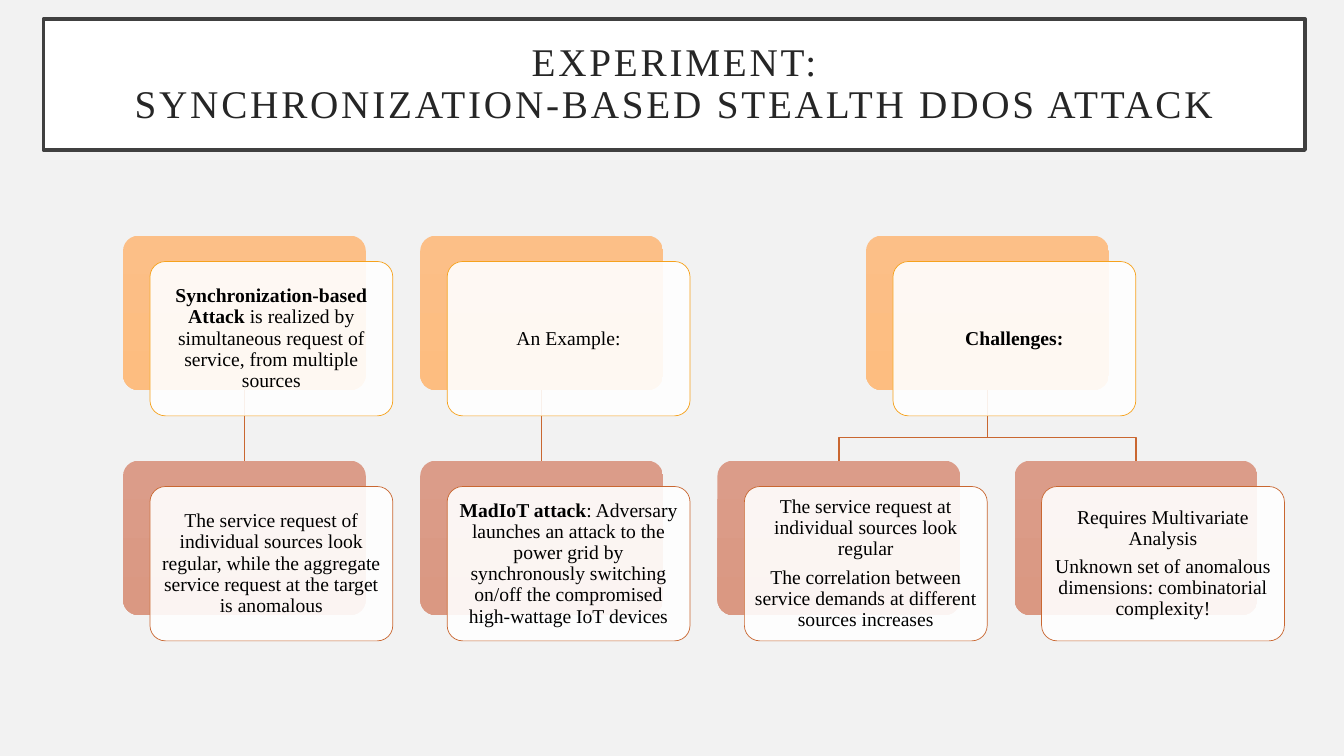
from dataclasses import dataclass

from pptx import Presentation
from pptx.dml.color import RGBColor as Rgb
from pptx.enum.shapes import MSO_CONNECTOR as Connector, MSO_SHAPE as Preset
from pptx.enum.text import MSO_ANCHOR as Anchor, MSO_AUTO_SIZE as AutoSize, PP_ALIGN as Align
from pptx.oxml.ns import qn
from pptx.util import Cm, Pt


@dataclass(frozen=True)
class Theme:
    """Colours, fonts and type sizes of the slide."""
    font: str = "Times New Roman"
    title_size: int = 28
    body_size: int = 14
    paper: str = "F2F2F2"
    white: str = "FFFFFF"
    black: str = "000000"
    title_ink: str = "262626"
    frame: str = "404040"
    orange: str = "F6A21D"
    rust: str = "C96731"
    orange_back: tuple = ("FCBF87", "FDBD80")
    rust_back: tuple = ("DB9C89", "DA9882")


@dataclass(frozen=True)
class Box:
    """A rectangle in centimetres."""
    left: float
    top: float
    width: float
    height: float

    def lengths(self):
        """Return the four lengths for a shape call."""
        return Cm(self.left), Cm(self.top), Cm(self.width), Cm(self.height)


THEME = Theme()
TITLE = ["EXPERIMENT:", "SYNCHRONIZATION-BASED STEALTH DDOS ATTACK"]
BRANCHES = [
    ([("Synchronization-based Attack", " is realized by simultaneous request of service, "
       "from multiple sources")],
     [[("", "The service request of individual sources look regular, while the aggregate "
        "service request at the target is anomalous")]]),
    ([("", "An Example:")],
     [[("MadIoT attack", ": Adversary launches an attack to the power grid by synchronously "
        "switching on/off the compromised high-wattage IoT devices")]]),
    ([("Challenges:", "")],
     [[("", "The service request at individual sources look regular"),
       ("", "The correlation between service demands at different sources increases")],
      [("", "Requires Multivariate Analysis"),
       ("", "Unknown set of anomalous dimensions: combinatorial complexity!")]]),
]
CARD_WIDTH, CARD_HEIGHT = 6.12, 3.89
COLUMN_STEP, ROW_STEP = 7.49, 5.67
SHIFT_X, SHIFT_Y = 0.68, 0.65
ELBOW_RISE = 0.58


def style_para(para, size, colour):
    """Format a centred paragraph."""
    para.alignment = Align.CENTER
    para.line_spacing = 0.9
    para.font.name = THEME.font
    para.font.size = Pt(size)
    para.font.color.rgb = Rgb.from_string(colour)


def set_frame(frame, inset):
    """Set wrapping, anchor and equal margins of a text frame."""
    frame.word_wrap = True
    frame.auto_size = AutoSize.NONE
    frame.vertical_anchor = Anchor.MIDDLE
    frame.margin_left = frame.margin_right = Cm(inset)
    frame.margin_top = frame.margin_bottom = Cm(inset)


def set_line(shape, colour, width):
    """Give a shape or connector a solid line."""
    shape.line.color.rgb = Rgb.from_string(colour)
    shape.line.width = Pt(width)


def add_title(page, box):
    """Place the framed title."""
    title = page.shapes.title
    title.left, title.top, title.width, title.height = box.lengths()
    title.fill.solid()
    title.fill.fore_color.rgb = Rgb.from_string(THEME.white)
    set_line(title, THEME.frame, 2.5)
    frame = title.text_frame
    set_frame(frame, 0.5)
    frame.text = "\n".join(TITLE)
    for para in frame.paragraphs:
        style_para(para, THEME.title_size, THEME.title_ink)
        for span in para.runs:
            span.font._element.set("spc", "200")


def add_rounded(page, box):
    """Add a rounded rectangle without shadow."""
    shape = page.shapes.add_shape(Preset.ROUNDED_RECTANGLE, *box.lengths())
    shape.adjustments[0] = 0.1
    shape.shadow.inherit = False
    return shape


def add_back(page, box, colours):
    """Add the tinted card that lies behind."""
    back = add_rounded(page, box)
    back.fill.gradient()
    back.fill.gradient_angle = 270
    for stop, colour in zip(back.fill.gradient_stops, colours):
        stop.color.rgb = Rgb.from_string(colour)
    back.line.fill.background()
    return back


def add_front(page, box, colour, paragraphs):
    """Add the translucent text card, shifted from the card behind."""
    front = add_rounded(page, Box(box.left + SHIFT_X, box.top + SHIFT_Y, box.width, box.height))
    front.fill.solid()
    front.fill.fore_color.rgb = Rgb.from_string(THEME.white)
    tint = front._element.spPr.find(qn("a:solidFill"))[0]
    tint.append(tint.makeelement(qn("a:alpha"), {"val": "90000"}))
    set_line(front, colour, 0.5)
    frame = front.text_frame
    set_frame(frame, 0.15)
    for index, (strong, plain) in enumerate(paragraphs):
        para = frame.add_paragraph() if index else frame.paragraphs[0]
        style_para(para, THEME.body_size, THEME.black)
        para.space_after = Pt(4.9)
        for words, bold in ((strong, True), (plain, False)):
            if words:
                span = para.add_run()
                span.text = words
                span.font.bold = bold


def add_link(page, parent, child):
    """Join a parent card to a child card, straight or with a bend."""
    start_x, start_y = parent.left + parent.width // 2, parent.top + parent.height
    end_x, end_y = child.left + child.width // 2, child.top
    if start_x == end_x:
        link = page.shapes.add_connector(Connector.STRAIGHT, start_x, start_y, end_x, end_y)
        link.begin_connect(parent, 2)
        link.end_connect(child, 0)
        properties = link._element.spPr
        set_line(link, THEME.rust, 1)
        properties.append(properties.makeelement(qn("a:effectLst"), {}))
    else:
        bend_y = end_y - Cm(ELBOW_RISE)
        path = page.shapes.build_freeform(start_x, start_y)
        path.add_line_segments([(start_x, bend_y), (end_x, bend_y), (end_x, end_y)], close=False)
        link = path.convert_to_shape()
        link.fill.background()
        link.shadow.inherit = False
        set_line(link, THEME.rust, 1)


def add_hierarchy(page, left, top):
    """Draw the branches with every parent centred over its children."""
    links, fronts, column = [], [], 0
    for heading, details in BRANCHES:
        middle = column + (len(details) - 1) / 2
        box = Box(left + middle * COLUMN_STEP, top, CARD_WIDTH, CARD_HEIGHT)
        parent = add_back(page, box, THEME.orange_back)
        fronts.append((box, THEME.orange, heading))
        for detail in details:
            box = Box(left + column * COLUMN_STEP, top + ROW_STEP, CARD_WIDTH, CARD_HEIGHT)
            links.append((parent, add_back(page, box, THEME.rust_back)))
            fronts.append((box, THEME.rust, detail))
            column += 1
    for parent, child in links:
        add_link(page, parent, child)
    for front in fronts:
        add_front(page, *front)


def main():
    """Build and save the deck."""
    deck = Presentation()
    deck.slide_width, deck.slide_height = Cm(33.87), Cm(19.05)
    page = deck.slides.add_slide(deck.slide_layouts[5])
    page.background.fill.solid()
    page.background.fill.fore_color.rgb = Rgb.from_string(THEME.paper)
    add_title(page, Box(1.09, 0.48, 31.8, 3.3))
    add_hierarchy(page, 3.1, 5.94)
    deck.save("out.pptx")


if __name__ == "__main__":
    main()
